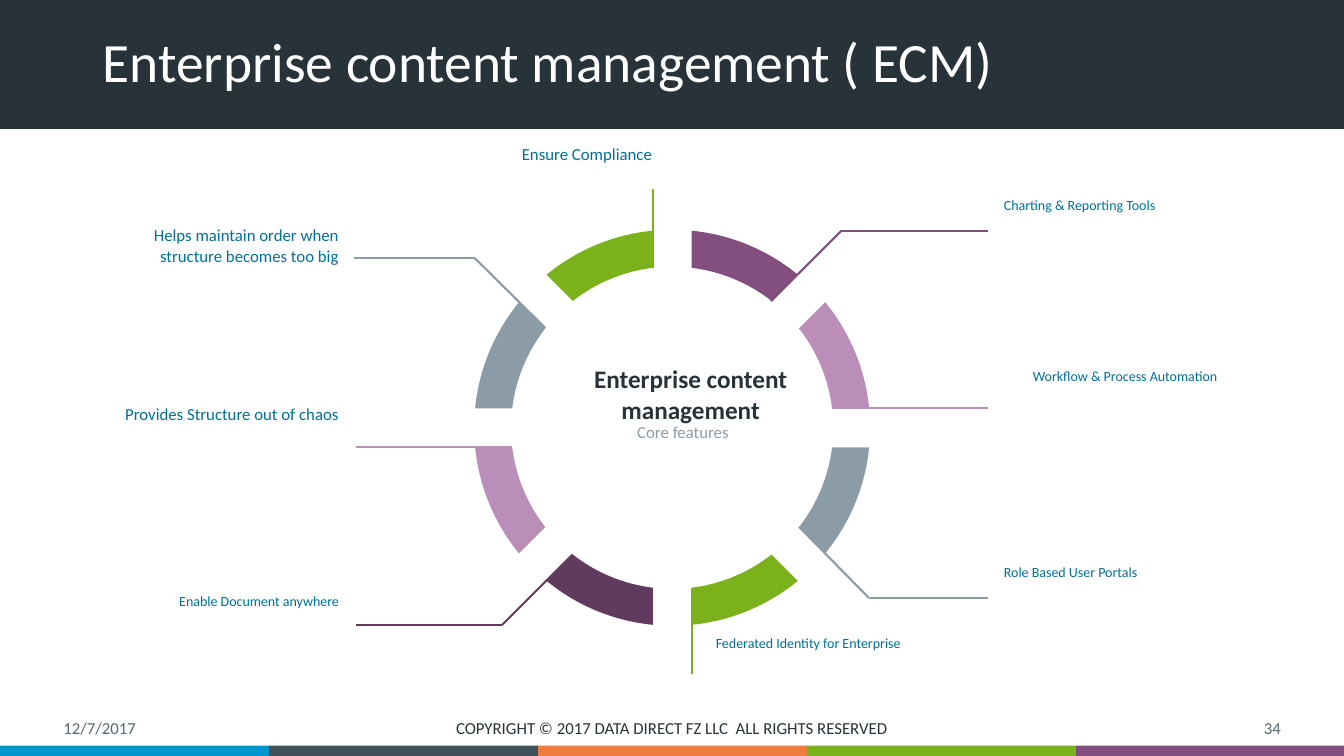
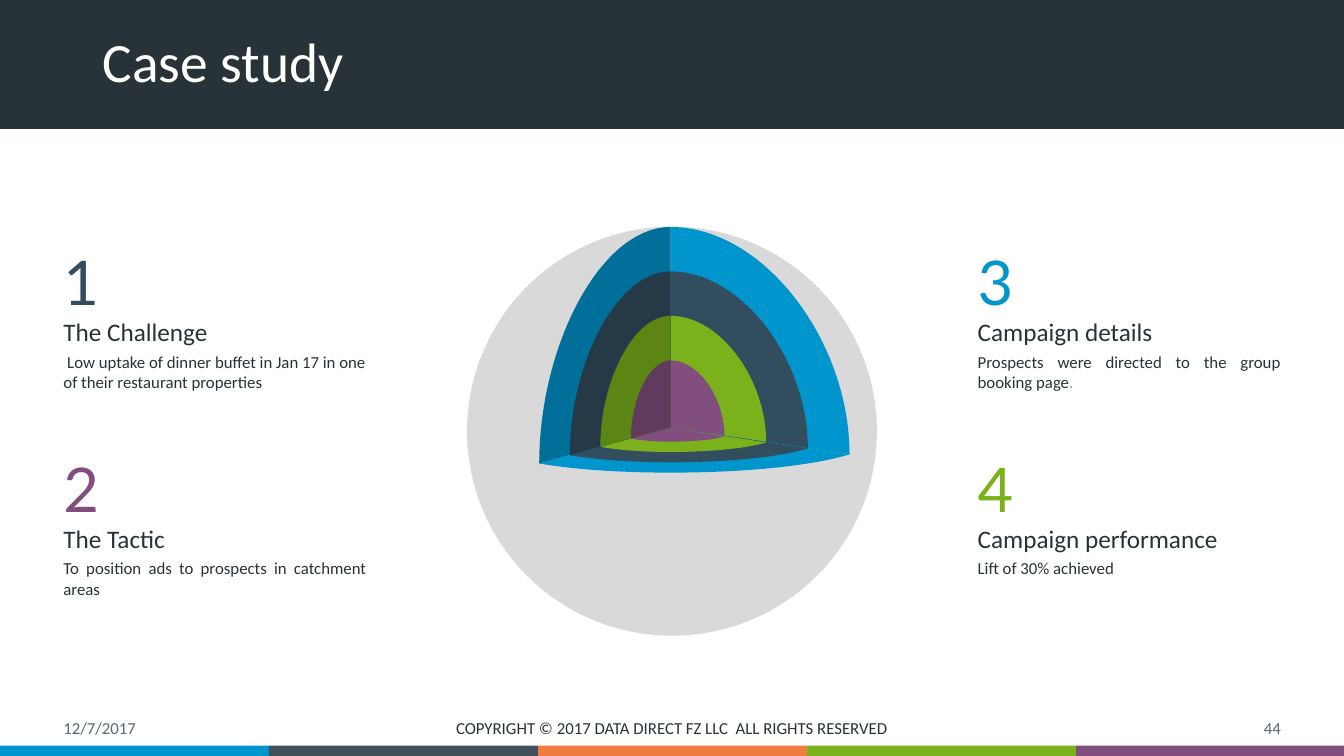
from dataclasses import dataclass
from math import asin, cos, pi, sin, tan

from pptx import Presentation
from pptx.dml.color import RGBColor as Rgb
from pptx.enum.shapes import MSO_CONNECTOR as Link, MSO_SHAPE as Kind
from pptx.enum.text import MSO_ANCHOR as Anchor, PP_ALIGN as Align
from pptx.oxml.ns import qn
from pptx.slide import Slide
from pptx.text.text import _Paragraph as Para
from pptx.util import Cm, Pt

# Colours
INK = Rgb(0x27, 0x33, 0x39)
SLATE = Rgb(0x40, 0x51, 0x5A)
STONE = Rgb(0x57, 0x69, 0x73)
GREY = Rgb(0x8C, 0x9C, 0xA6)
PALE = Rgb(0xD9, 0xD9, 0xD9)
WHITE = Rgb(0xFF, 0xFF, 0xFF)
BLUE = Rgb(0x00, 0x95, 0xCD)
TEAL = Rgb(0x00, 0x70, 0x9A)
NAVY = Rgb(0x32, 0x4D, 0x5E)
NIGHT = Rgb(0x25, 0x3A, 0x46)
ORANGE = Rgb(0xF1, 0x7C, 0x3F)
GREEN = Rgb(0x7B, 0xB2, 0x1B)
MOSS = Rgb(0x5C, 0x86, 0x14)
PURPLE = Rgb(0x81, 0x4E, 0x7E)
PLUM = Rgb(0x61, 0x3B, 0x5E)
LILAC = Rgb(0xBA, 0x8E, 0xB8)

# Sizes in centimetres
WIDE, HIGH = 33.87, 19.05
STRIPE = 6.78
STRIPES = (BLUE, SLATE, ORANGE, GREEN, PURPLE)

Point = tuple[float, float]
# One point draws a line, three points draw a cubic curve
Step = tuple[Point, ...]


@dataclass(frozen=True)
class Label:
    text: str
    left: float
    top: float
    width: float
    size: float = 10
    align: Align = Align.LEFT
    color: Rgb = TEAL
    bold: bool = False
    font: str = "Calibri"
    height: float = 0.7
    anchor: Anchor = Anchor.TOP


@dataclass(frozen=True)
class Lead:
    color: Rgb
    points: tuple[Point, ...]


@dataclass(frozen=True)
class Card:
    mark: str
    color: Rgb
    head: str
    body: str
    left: float
    top: float
    align: Align = Align.JUSTIFY
    tail: str = ""


@dataclass(frozen=True)
class Shell:
    light: Rgb
    dark: Rgb


# Drawing tools
def write(slide: Slide, label: Label) -> Para:
    box = slide.shapes.add_textbox(
        Cm(label.left), Cm(label.top), Cm(label.width), Cm(label.height))
    frame = box.text_frame
    frame.word_wrap = True
    frame.vertical_anchor = label.anchor
    para = frame.paragraphs[0]
    para.text = label.text
    para.alignment = label.align
    font = para.font
    font.name, font.size, font.bold = label.font, Pt(label.size), label.bold
    font.color.rgb = label.color
    return para


def paint(shape, color: Rgb) -> None:
    shape.shadow.inherit = False
    shape.fill.solid()
    shape.fill.fore_color.rgb = color
    shape.line.fill.background()


def block(slide: Slide, kind: Kind, left: float, top: float,
          width: float, height: float, color: Rgb) -> None:
    paint(slide.shapes.add_shape(
        kind, Cm(left), Cm(top), Cm(width), Cm(height)), color)


def patch(slide: Slide, first: Point, steps: list[Step], color: Rgb) -> None:
    pen = slide.shapes.build_freeform(Cm(first[0]), Cm(first[1]))
    pen.add_line_segments([(Cm(x), Cm(y)) for step in steps for x, y in step],
                          close=True)
    shape = pen.convert_to_shape()
    # Join the three segments of each curve into one
    lines = iter(list(shape._element.iter(qn("a:lnTo"))))
    for step in steps:
        parts = [next(lines) for _ in step]
        if len(parts) == 3:
            curve = parts[0].makeelement(qn("a:cubicBezTo"), {})
            parts[0].addprevious(curve)
            for part in parts:
                curve.append(part[0])
                part.getparent().remove(part)
    paint(shape, color)


def trace(slide: Slide, lead: Lead) -> None:
    for start, end in zip(lead.points, lead.points[1:]):
        line = slide.shapes.add_connector(
            Link.STRAIGHT, *(Cm(v) for v in start + end))
        line.line.color.rgb = lead.color
        line.line.width = Pt(1.5)
        props = line._element.spPr
        props.append(props.makeelement(qn("a:effectLst"), {}))


# Shared frame: title band, stripes, footer
def start(deck: Presentation, title: str, page: str) -> Slide:
    slide = deck.slides.add_slide(deck.slide_layouts[6])
    block(slide, Kind.RECTANGLE, 0, 0, WIDE, 3.25, INK)
    for i, color in enumerate(STRIPES):
        left = i * STRIPE
        block(slide, Kind.RECTANGLE, left, 18.79,
              min(STRIPE, WIDE - left), 0.26, color)
    head = write(slide, Label(title, 2.34, 0.69, 29.21, 39.6, color=WHITE,
                              height=1.88, anchor=Anchor.MIDDLE))
    head.line_spacing = 0.9
    for text, left, width, align, color in (
            ("12/7/2017", 1.35, 7.62, Align.LEFT, STONE),
            ("COPYRIGHT © 2017 DATA DIRECT FZ LLC  ALL RIGHTS RESERVED",
             11.22, 11.43, Align.CENTER, INK),
            (page, 24.91, 7.62, Align.RIGHT, STONE)):
        write(slide, Label(text, left, 17.94, width, 12, align, color,
                           height=0.79, anchor=Anchor.MIDDLE))
    return slide


# Ring slide
HUB = (16.94, 10.78)
OUTER, INNER, GAP = 4.99, 4.06, 0.49
# Clockwise from the right
RING = (GREY, GREEN, PLUM, LILAC, GREY, GREEN, PURPLE, LILAC)

LEADS = (
    Lead(PURPLE, ((19.43, 7.59), (21.2, 5.82), (24.89, 5.82))),
    Lead(GREY, ((20.14, 13.28), (21.89, 15.06), (24.89, 15.06))),
    Lead(GREY, ((13.74, 8.26), (11.96, 6.5), (8.93, 6.5))),
    Lead(PLUM, ((14.43, 13.97), (12.65, 15.75), (8.97, 15.75))),
    Lead(LILAC, ((20.96, 10.29), (24.9, 10.29))),
    Lead(GREEN, ((16.46, 6.76), (16.46, 4.77))),
    Lead(LILAC, ((8.97, 11.27), (12.9, 11.27))),
    Lead(GREEN, ((17.43, 14.81), (17.43, 16.98))),
)

LABELS = (
    Label("Charting & Reporting Tools", 25.05, 4.83, 4.6),
    Label("Role Based User Portals", 25.05, 14.07, 5.26),
    Label("Workflow & Process Automation", 25.78, 9.14, 5.77),
    Label("Helps maintain order when structure becomes too big",
          2.52, 5.55, 6.27, 12, Align.RIGHT),
    Label("Enable Document anywhere", 4.19, 14.81, 4.6, align=Align.RIGHT),
    Label("Provides Structure out of chaos",
          2.57, 10.05, 6.22, 12, Align.RIGHT),
    Label("Enterprise content management",
          13.2, 9.04, 8.41, 18, Align.CENTER, INK, True),
    Label("Core features", 15.81, 10.49, 6.32, 12, Align.JUSTIFY, GREY),
    Label("Federated Identity for Enterprise",
          17.79, 15.86, 6.5, align=Align.JUSTIFY),
    Label("Ensure Compliance", 12.9, 3.5, 4.52, 12, Align.JUSTIFY),
)


def arc(radius: float, part: int) -> list[Point]:
    """Curve points of an eighth of a circle, trimmed at both ends."""
    trim = asin(GAP / radius)
    a, b = part * pi / 4 + trim, (part + 1) * pi / 4 - trim
    pull = 4 / 3 * tan((b - a) / 4)
    return [(HUB[0] + radius * (cos(t) - k * sin(t)),
             HUB[1] + radius * (sin(t) + k * cos(t)))
            for t, k in ((a, 0), (a, pull), (b, -pull), (b, 0))]


def ring(deck: Presentation) -> None:
    slide = start(deck, "Enterprise content management ( ECM)", "34")
    for part, color in enumerate(RING):
        outer, inner = arc(OUTER, part), arc(INNER, part)[::-1]
        patch(slide, outer[0],
              [tuple(outer[1:]), (inner[0],), tuple(inner[1:])], color)
    for lead in LEADS:
        trace(slide, lead)
    for label in LABELS:
        write(slide, label)


# Case slide
CORE = (16.9, 10.77)
SHELLS = (Shell(BLUE, TEAL), Shell(NAVY, NIGHT),
          Shell(GREEN, MOSS), Shell(PURPLE, PLUM))
COLS, ROWS = (1.35, 24.39), (6.02, 11.23)

CARDS = (
    Card("1", NAVY, "The Challenge",
         " Low uptake of dinner buffet in Jan 17 in one of their restaurant"
         " properties", COLS[0], ROWS[0], Align.LEFT),
    Card("2", PURPLE, "The Tactic",
         "To position ads to prospects in catchment areas", COLS[0], ROWS[1]),
    Card("3", BLUE, "Campaign details",
         "Prospects were directed to the group booking page",
         COLS[1], ROWS[0], tail="."),
    Card("4", GREEN, "Campaign performance", "Lift of 30% achieved",
         COLS[1], ROWS[1], Align.LEFT),
)


def faces(level: int) -> tuple[list[Step], ...]:
    """Right, lower and left face of a shell, drawn from the core."""
    def at(x: float, y: float) -> Point:
        return CORE[0] + x, CORE[1] + y

    top = -5.05 + 1.12 * level
    low = 1.14 - 0.26 * level
    rx, ry = 4.51 - 1.05 * level, 0.68 - 0.15 * level
    lx, ly = -3.31 + 0.77 * level, 0.91 - 0.21 * level
    peak, right, left = at(0, top), at(rx, ry), at(lx, ly)
    return (
        [(right,), (at(rx, (ry + top) / 2), at(0.52 * rx, top), peak)],
        [(right,),
         (at(0.8 * rx, ry + 0.61 * (low - ry)), at(0.43 * rx, low),
          at(0, low)),
         (at(0.38 * lx, low), at(0.73 * lx, ly + 0.67 * (low - ly)), left)],
        [(peak,), (at(0.53 * lx, top), at(lx, (ly + top) / 2), left)],
    )


def place(slide: Slide, card: Card) -> None:
    write(slide, Label(card.head, card.left, card.top + 1.83, 7.47, 18,
                       color=INK))
    write(slide, Label(card.mark, card.left, card.top, 1.96, 44,
                       Align.JUSTIFY, card.color, font="Lato"))
    para = write(slide, Label(card.body, card.left, card.top + 2.71, 8.14, 12,
                              card.align, INK))
    if card.tail:
        run = para.add_run()
        run.text = card.tail
        run.font.color.rgb = GREY


def case(deck: Presentation) -> None:
    slide = start(deck, "Case study", "44")
    block(slide, Kind.OVAL, 11.77, 5.71, 10.33, 10.31, PALE)
    for side in range(3):
        for level, shell in enumerate(SHELLS):
            color = shell.dark if side == 2 else shell.light
            patch(slide, CORE, faces(level)[side], color)
    for card in CARDS:
        place(slide, card)


def main() -> None:
    deck = Presentation()
    deck.slide_width, deck.slide_height = Cm(WIDE), Cm(HIGH)
    ring(deck)
    case(deck)
    deck.save("out.pptx")


if __name__ == "__main__":
    main()
